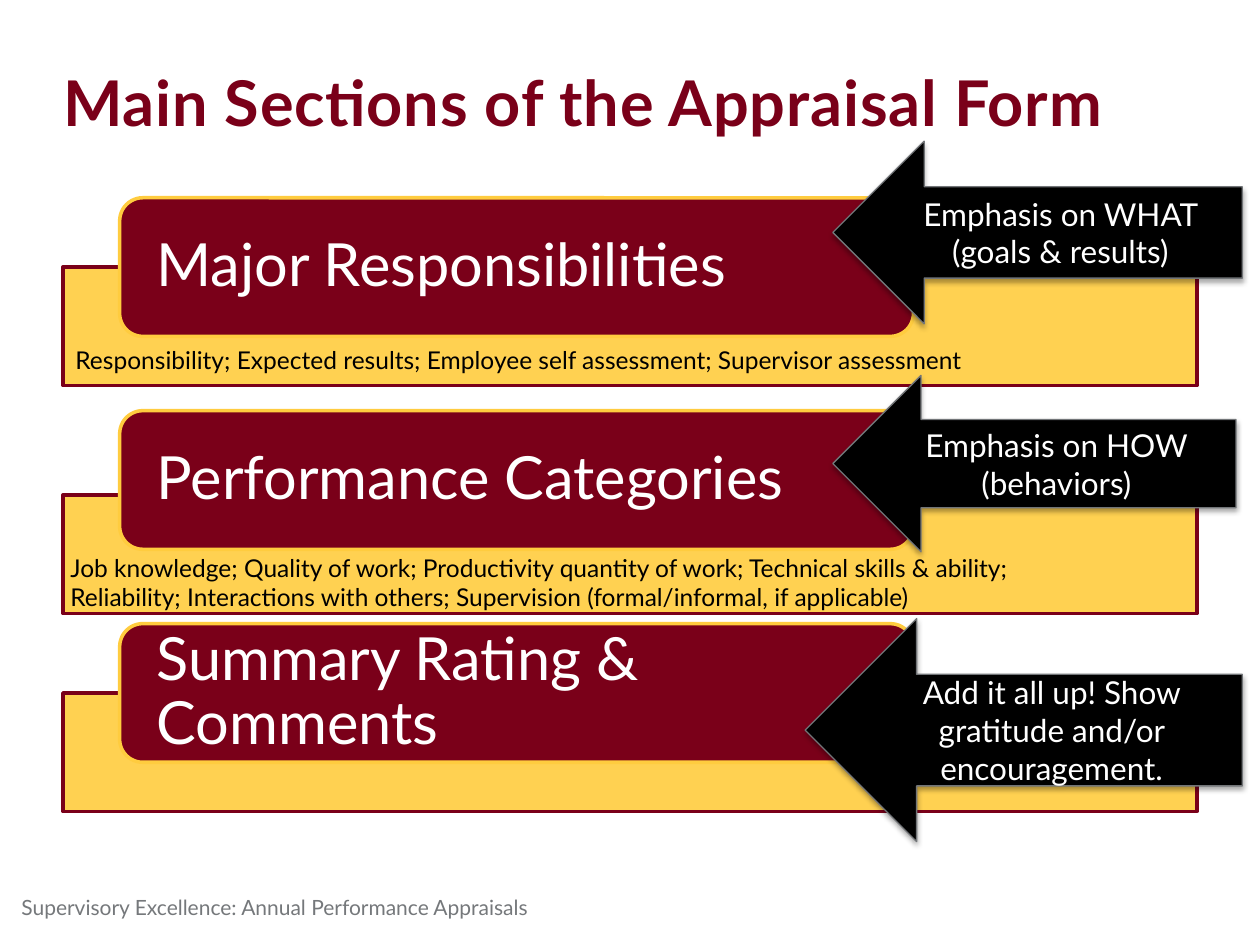
from pptx import Presentation
from pptx import util as u
from pptx.dml import color
from pptx.enum import shapes, text
from pptx.oxml import parse_xml
from pptx.oxml import ns

MAROON, GOLD, BLACK, WHITE = "7A0019", "FFCC3F", "000000", "FFFFFF"
ARROW_EDGE, FOOTER_GRAY = "727578", "75787B"

deck = Presentation()
deck.slide_width, deck.slide_height = u.Inches(10), u.Inches(7.5)
column, row = deck.slide_width / 100, deck.slide_height / 75
slide = deck.slides.add_slide(deck.slide_layouts[5])


def write(shape, lines, size, hue, align=text.PP_ALIGN.LEFT, bold=False, **frame_format):
    frame = shape.text_frame
    for name, value in {"word_wrap": True, **frame_format}.items():
        setattr(frame, name, value)
    frame.text = "\n".join(lines)
    for paragraph in frame.paragraphs:
        paragraph.alignment = align
        for run in paragraph.runs:
            for name, value in {"name": "Lato", "size": u.Pt(size), "bold": bold}.items():
                setattr(run.font, name, value)
            run.font.color.rgb = color.RGBColor.from_string(hue)
    return frame


def draw(kind, cell, fill=None, edge=None, weight=2):
    left, top, width, height = cell
    place = [int(n) for n in (left * column, top * row, width * column, height * row)]
    if kind is None:
        return slide.shapes.add_textbox(*place)
    shape = slide.shapes.add_shape(kind, *place)
    shape.shadow.inherit = False
    shape.fill.solid()
    shape.fill.fore_color.rgb = color.RGBColor.from_string(fill)
    shape.line.color.rgb = color.RGBColor.from_string(edge)
    shape.line.width = u.Pt(weight)
    return shape


flush = {"margin_left": 0, "margin_right": 0, "margin_top": 0, "margin_bottom": 0}

title = slide.shapes.title
title.left, title.top = int(5 * column), int(5 * row)
title.width, title.height = int(90 * column), int(7.6 * row)
heading = write(title, ["Main Sections of the Appraisal Form"], 36, MAROON, bold=True,
                vertical_anchor=text.MSO_ANCHOR.TOP, auto_size=text.MSO_AUTO_SIZE.NONE, **flush)
heading.paragraphs[0].runs[0].font._element.set("spc", "50")

sections = [("Major Responsibilities", 21.2),
            ("Performance Categories", 39.3),
            ("Summary Rating & Comments", 55)]
for index, (section, panel_top) in enumerate(sections):
    panel = draw(shapes.MSO_SHAPE.RECTANGLE, (5, panel_top, 90, 9.4), GOLD, MAROON)
    gold = panel.fill._xPr.find(".//" + ns.qn("a:srgbClr"))
    gold.append(parse_xml(f'<a:alpha {ns.nsdecls("a")} val="90000"/>'))

    banner = draw(shapes.MSO_SHAPE.ROUNDED_RECTANGLE,
                  (9.5, 15.7 + 16.9 * index, 63, 11), MAROON, GOLD)
    label = write(banner, [section], 34, WHITE, vertical_anchor=text.MSO_ANCHOR.MIDDLE,
                  **{**flush, "margin_left": u.Inches(0.24), "margin_right": u.Inches(0.24)})
    label.paragraphs[0].line_spacing = 0.9

footer = draw(None, (0, 71, 66.8, 3.1))
write(footer, ["Supervisory Excellence: Annual Performance Appraisals"], 12, FOOTER_GRAY,
      **{**flush, "margin_left": u.Inches(0.17)})

details = [
    ((4.6, 43.4, 89.9, 5.7),
     ["Job knowledge; Quality of work; Productivity quantity of work; Technical skills & ability;",
      "Reliability; Interactions with others; Supervision (formal/informal, if applicable)"]),
    ((5, 26.9, 89.5, 3.4),
     ["Responsibility; Expected results; Employee self assessment; Supervisor assessment"]),
]
for cell, lines in details:
    write(draw(None, cell), lines, 14, BLACK)

emphases = [
    ((66.1, 11.2, 32.5, 14.5), "Emphasis on WHAT (goals & results)"),
    ((66.1, 29.8, 32, 14), "Emphasis on HOW (behaviors)"),
    ((63.9, 49.1, 34.7, 17.7), "Add it all up! Show gratitude and/or encouragement."),
]
for cell, emphasis in emphases:
    arrow = draw(shapes.MSO_SHAPE.LEFT_ARROW, cell, BLACK, ARROW_EDGE, 0.75)
    write(arrow, [emphasis], 18, WHITE, text.PP_ALIGN.CENTER,
          vertical_anchor=text.MSO_ANCHOR.MIDDLE)
    effects = arrow._element.spPr.find(ns.qn("a:effectLst"))
    effects.append(parse_xml(
        f'<a:outerShdw {ns.nsdecls("a")} blurRad="{u.Pt(3.1)}" dist="{u.Pt(1.8)}" dir="5400000" '
        f'rotWithShape="0"><a:srgbClr val="{BLACK}"><a:alpha val="35000"/></a:srgbClr></a:outerShdw>'))

deck.save("out.pptx")
